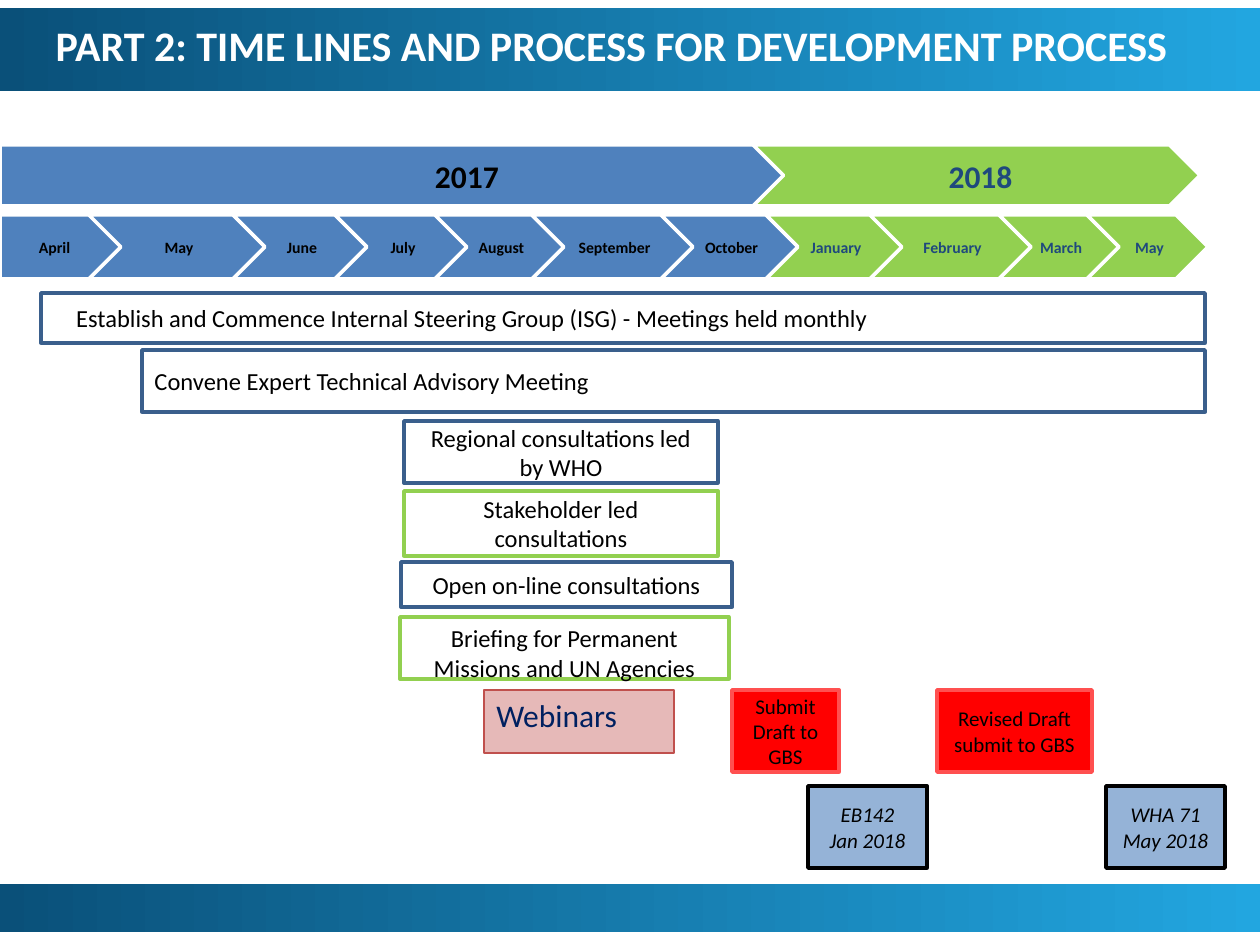
import pptx
import pptx.dml.color
import pptx.enum.shapes
import pptx.enum.text
import pptx.util

SCALE = 914400 / 126
SHAPE = pptx.enum.shapes.MSO_SHAPE
ALIGN = pptx.enum.text.PP_ALIGN
ANCHOR = pptx.enum.text.MSO_ANCHOR
COLORS = {
    "navy": "0A5079", "sky": "22A6E0", "blue": "4F81BD", "green": "92D050",
    "outline": "3A5F8C", "dark": "1F497D", "black": "000000", "white": "FFFFFF",
    "red": "FF0000", "coral": "FF5050", "steel": "95B3D7", "pink": "E6B9B8",
    "brick": "C0504D", "ink": "002060",
}


def px(n):
    """Turn pixels into EMU."""
    return pptx.util.Emu(round(n * SCALE))


def rgb(name):
    """Look up a named colour."""
    return pptx.dml.color.RGBColor.from_string(COLORS[name])


def write(sp, text, size=14, color="black", bold=False, italic=False,
          align=ALIGN.CENTER, anchor=ANCHOR.MIDDLE, wrap=True, left=None):
    """Put formatted text into a shape, one paragraph a line."""
    tf = sp.text_frame
    tf.word_wrap = wrap
    tf.auto_size = pptx.enum.text.MSO_AUTO_SIZE.NONE
    tf.vertical_anchor = anchor
    if left is not None:
        tf.margin_left = px(left)
    for i, line in enumerate(text.split("\n")):
        p = tf.paragraphs[0] if i == 0 else tf.add_paragraph()
        p.alignment = align
        r = p.add_run()
        r.text = line
        r.font.name = "Calibri"
        r.font.size = pptx.util.Pt(size)
        r.font.bold = bold
        r.font.italic = italic
        r.font.color.rgb = rgb(color)


def add_box(slide, box, kind=SHAPE.RECTANGLE, fill=None, line=None, width=2):
    """Add a preset shape with a plain fill and outline."""
    sp = slide.shapes.add_shape(kind, *map(px, box))
    sp.shadow.inherit = False
    if fill:
        sp.fill.solid()
        sp.fill.fore_color.rgb = rgb(fill)
    else:
        sp.fill.background()
    if line:
        sp.line.color.rgb = rgb(line)
        sp.line.width = pptx.util.Pt(width)
    else:
        sp.line.fill.background()
    return sp


def add_band(slide, box):
    """Add a full-width gradient band."""
    sp = add_box(slide, box)
    sp.fill.gradient()
    sp.fill.gradient_angle = 0
    for stop, name in zip(sp.fill.gradient_stops, ("navy", "sky")):
        stop.color.rgb = rgb(name)


def add_header(slide, box, text):
    """Add the title over its gradient band."""
    x, y, w, h = box
    add_band(slide, box)
    title = slide.shapes.title
    title.left, title.top, title.width, title.height = map(
        px, (x + 43, y - 42, w - 78, h + 74))
    write(title, text, size=24, color="white", bold=True, align=ALIGN.LEFT)
    title.element.getparent().append(title.element)


def add_arrow_row(slide, box, steps, overlap, size, margin):
    """Add a row of interlocking arrows, from (text, width, is_2018) steps."""
    x, y, h = box
    for i, (text, w, is_2018) in enumerate(steps):
        kind = SHAPE.CHEVRON if i else SHAPE.PENTAGON
        sp = add_box(slide, (x, y, w, h), kind,
                     "green" if is_2018 else "blue", "white")
        write(sp, text, size=size, bold=True, wrap=False, left=margin,
              color="dark" if is_2018 else "black")
        sp.text_frame.margin_right = px(margin // 3)
        x += w - overlap


def add_activities(slide, box):
    """Add the outlined activity bars."""
    x, y = box
    bars = [
        ((0, 0, 1164, 50), "outline",
         "Establish and Commence Internal Steering Group (ISG) - Meetings held monthly",
         {"align": ALIGN.LEFT, "left": 35}),
        ((101, 57, 1063, 62), "outline", "Convene Expert Technical Advisory Meeting",
         {"align": ALIGN.LEFT}),
        ((363, 128, 314, 62), "outline", "Regional consultations led by WHO", {}),
        ((363, 198, 314, 65), "green", "Stakeholder led consultations", {}),
        ((360, 269, 331, 45), "outline", "Open on-line consultations", {}),
        ((359, 324, 329, 62), "green",
         "Briefing for Permanent Missions and UN Agencies", {"anchor": ANCHOR.TOP}),
    ]
    for (dx, dy, w, h), line, text, fmt in bars:
        write(add_box(slide, (x + dx, y + dy, w, h), line=line), text, **fmt)


def add_milestones(slide, box):
    """Add the filled webinar, draft and meeting boxes."""
    x, y = box
    sp = add_box(slide, (x, y, 190, 63), fill="pink", line="brick", width=0.75)
    write(sp, "Webinars", size=18, color="ink", align=ALIGN.LEFT, anchor=ANCHOR.TOP)
    for dx, w, text in ((248, 107, "Submit Draft to GBS"),
                        (453, 155, "Revised Draft submit to GBS")):
        sp = add_box(slide, (x + dx, y, w, 82), fill="red", line="coral")
        write(sp, text, size=12)
    for dx, text in ((324, "EB142\nJan 2018"), (622, "WHA 71\nMay 2018")):
        sp = add_box(slide, (x + dx, y + 96, 119, 82), fill="steel", line="black")
        write(sp, text, size=12, italic=True)


def main():
    """Build and save the timeline slide."""
    prs = pptx.Presentation()
    prs.slide_width, prs.slide_height = px(1260), px(945)
    slide = prs.slides.add_slide(prs.slide_layouts[5])
    years = [("2017", 941, False), ("2018", 447, True)]
    months = [
        ("April", 121, False), ("May", 176, False), ("June", 134, False),
        ("July", 132, False), ("August", 129, False), ("September", 161, False),
        ("October", 137, False), ("January", 136, True), ("February", 161, True),
        ("March", 120, True), ("May", 121, True),
    ]
    add_band(slide, (0, 884, 1260, 48))
    add_arrow_row(slide, (0, 215, 64), months, 32, 9, 5)
    add_arrow_row(slide, (0, 145, 61), years, 188, 18, 12)
    add_activities(slide, (41, 293))
    add_milestones(slide, (484, 690))
    add_header(slide, (0, 8, 1260, 83),
               "PART 2: TIME LINES AND PROCESS FOR DEVELOPMENT PROCESS")
    prs.save("out.pptx")


if __name__ == "__main__":
    main()
